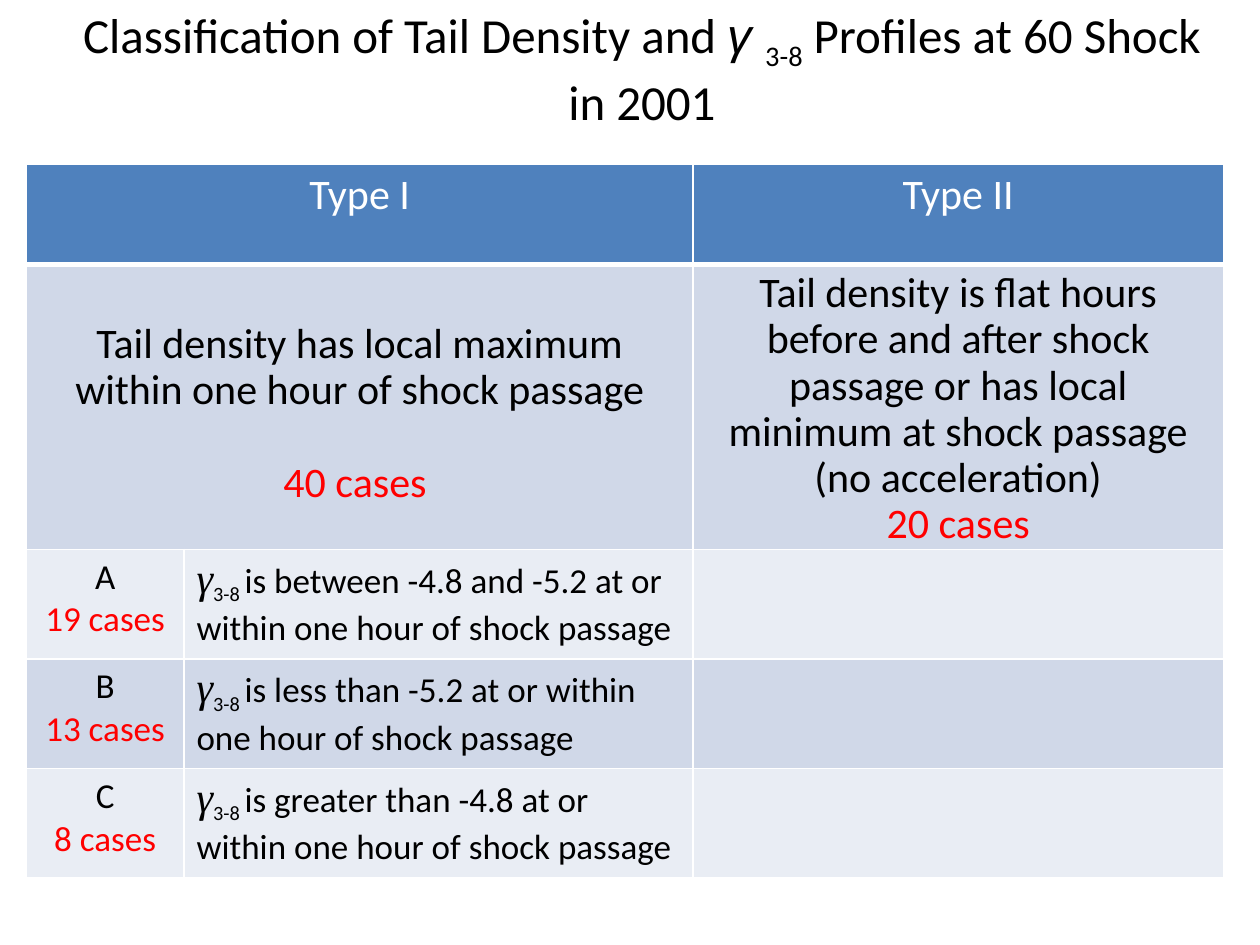
from lxml.etree import SubElement as Sub
from pptx import Presentation
from pptx.dml.color import RGBColor as RGB
from pptx.enum.text import PP_ALIGN as Align
from pptx.oxml import parse_xml
from pptx.oxml.ns import nsdecls, qn
from pptx.util import Inches, Pt

THEME = dict(
    font="Calibri", greek="Times New Roman", sign="Arial",
    ink="000000", red="FF0000", white="FFFFFF",
    head="4F81BD", dark="D0D8E8", pale="E9EDF4",
    title=28, big=24, small=20,
)

# Content
TITLE = ("Classification of Tail Density and ", "γ ", "3-8",
         " Profiles at 60 Shock in 2001")
HEADS = ("Type I", "Type II")
RULES = (
    ("Tail density has local maximum within one hour of shock passage",
     "40 cases "),
    ("Tail density is flat hours before and after shock passage or has "
     "local minimum at shock passage (no acceleration)", "20 cases"),
)
KINDS = (
    ("A", "19 cases", "is between -4.8 and -5.2 at or within one hour of shock passage"),
    ("B", "13 cases", "is less than -5.2 at or within one hour of shock passage"),
    ("C", "8 cases", "is greater than -4.8 at or within one hour of shock passage"),
)
COLS = (1.25, 4.04, 4.21)
ROWS = (0.8, 2.26, 0.87, 0.87, 0.87)
FILLS = ("head", "dark", "pale", "dark", "pale")


def write(para, text, size="big", color="ink", font="font", slant=False,
          base=0, align=None, space=None, gap=None):
    """Add one run to a paragraph and set its format."""
    run = para.add_run()
    run.text = text
    run.font.size = Pt(THEME[size])
    run.font.name = THEME[font]
    run.font.color.rgb = RGB.from_string(THEME[color])
    run.font.bold = False
    run.font.italic = slant
    if base:
        run._r.get_or_add_rPr().set("baseline", str(base * 1000))
    if align is not None:
        para.alignment = align
    if space:
        para.line_spacing = space
    if gap:
        para.space_before = Pt(gap)


def edge(cell, first):
    """Draw white borders; the header has a heavier lower one."""
    props = cell._tc.get_or_add_tcPr()
    for spot, side in enumerate("LRTB"):
        width = Pt(3 if first and side == "B" else 1)
        line = parse_xml(f'<a:ln{side} {nsdecls("a")} w="{width}"/>')
        paint = Sub(line, qn("a:solidFill"))
        Sub(paint, qn("a:srgbClr"), val=THEME["white"])
        props.insert(spot, line)


deck = Presentation()
deck.slide_width, deck.slide_height = Inches(10), Inches(7.5)
slide = deck.slides.add_slide(deck.slide_layouts[6])

# Title
box = slide.shapes.add_textbox(Inches(0.48), Inches(-0.01), Inches(9.23), Inches(1.04))
box.text_frame.word_wrap = True
para = box.text_frame.paragraphs[0]
lead, sign, range_, tail = TITLE
write(para, lead, size="title", align=Align.CENTER)
write(para, sign, size="title", font="sign", slant=True)
write(para, range_, size="title", base=-25)
write(para, tail, size="title")

# Table grid
grid = slide.shapes.add_table(len(ROWS), len(COLS), Inches(0.21), Inches(1.3),
                              Inches(sum(COLS)), Inches(sum(ROWS))).table
for col, width in zip(grid.columns, COLS):
    col.width = Inches(width)
for num, (row, height) in enumerate(zip(grid.rows, ROWS)):
    row.height = Inches(height)
    for cell in row.cells:
        edge(cell, num == 0)
        cell.fill.solid()
        cell.fill.fore_color.rgb = RGB.from_string(THEME[FILLS[num]])
for num in (0, 1):
    grid.cell(num, 0).merge(grid.cell(num, 1))

# Types and their rules
for col, head, (rule, count), gap in zip((0, 2), HEADS, RULES, (27, None)):
    write(grid.cell(0, col).text_frame.paragraphs[0], head,
          color="white", align=Align.CENTER)
    cell = grid.cell(1, col)
    if gap:
        cell.margin_top = Inches(0.45)
    frame = cell.text_frame
    write(frame.paragraphs[0], rule, align=Align.CENTER, space=0.9)
    write(frame.add_paragraph(), count, color="red", align=Align.CENTER,
          space=0.9, gap=gap)

# Kinds of type I
for num, (name, count, rule) in enumerate(KINDS, 2):
    frame = grid.cell(num, 0).text_frame
    write(frame.paragraphs[0], name, size="small", align=Align.CENTER)
    write(frame.add_paragraph(), count, size="small", color="red", align=Align.CENTER)
    para = grid.cell(num, 1).text_frame.paragraphs[0]
    write(para, "γ", font="greek", slant=True)
    write(para, "3-8 ", size="small", base=-25)
    write(para, rule, size="small")

deck.save("out.pptx")
